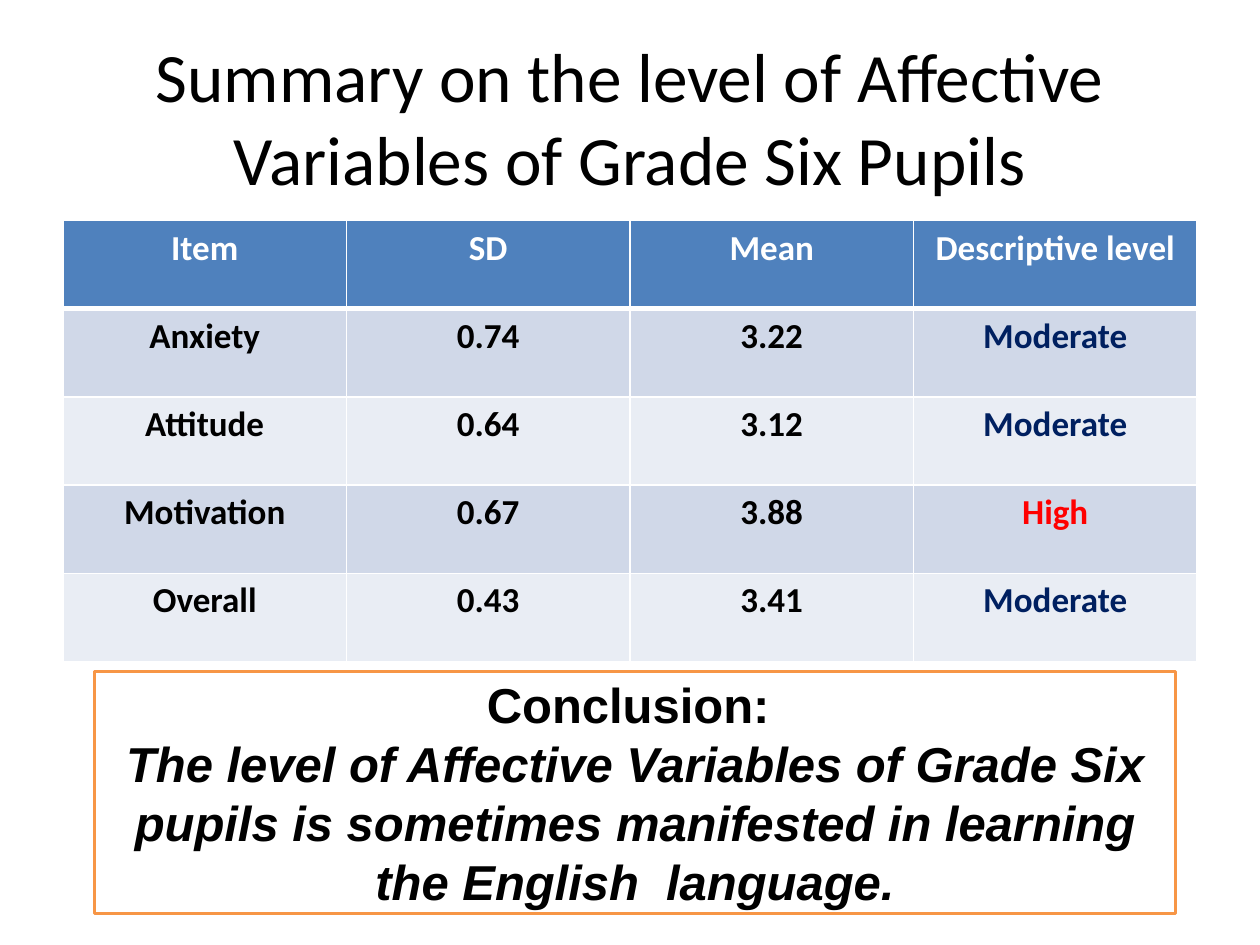
from dataclasses import dataclass

from lxml.etree import SubElement
from pptx import Presentation
from pptx.dml.color import RGBColor
from pptx.enum.shapes import MSO_SHAPE as Shape
from pptx.enum.text import MSO_ANCHOR as Anchor, PP_ALIGN as Align
from pptx.oxml.ns import qn
from pptx.util import Inches, Pt

COLORS = {
    "white": "FFFFFF", "black": "000000", "header": "4F81BD",
    "band_dark": "D0D8E8", "band_light": "E9EDF4",
    "navy": "002060", "red": "FF0000", "orange": "F79646",
}
LEVEL_COLORS = {"Moderate": "navy", "High": "red"}
HEADINGS = ("Item", "SD", "Mean", "Descriptive level")


@dataclass
class Result:
    item: str
    deviation: str
    mean: str
    level: str


RESULTS = [
    Result("Anxiety", "0.74", "3.22", "Moderate"),
    Result("Attitude", "0.64", "3.12", "Moderate"),
    Result("Motivation", "0.67", "3.88", "High"),
    Result("Overall", "0.43", "3.41", "Moderate"),
]


def color(name: str) -> RGBColor:
    return RGBColor.from_string(COLORS[name])


def write(paragraph, text: str, ink: str = "black", **font_format) -> None:
    """Put one centred run of text into a paragraph."""
    paragraph.alignment = Align.CENTER
    run = paragraph.add_run()
    run.text = text
    run.font.color.rgb = color(ink)
    for name, value in font_format.items():
        setattr(run.font, name, value)


def add_border(cell, side: str, width: float) -> None:
    line = SubElement(cell._tc.get_or_add_tcPr(), qn(f"a:{side}"), w=str(Pt(width)))
    fill = SubElement(line, qn("a:solidFill"))
    SubElement(fill, qn("a:srgbClr"), val=COLORS["white"])


def style_cell(cell, text: str, ink: str, fill: str, top: float, bottom: float) -> None:
    # Borders must precede the fill in the cell properties
    for side, width in {"lnL": 1, "lnR": 1, "lnT": top, "lnB": bottom}.items():
        add_border(cell, side, width)
    cell.fill.solid()
    cell.fill.fore_color.rgb = color(fill)
    write(cell.text_frame.paragraphs[0], text, ink,
          name="Calibri", size=Pt(20), bold=True)


def add_title(slide) -> None:
    box = slide.shapes.add_textbox(Inches(0.5), Inches(0.3), Inches(9), Inches(1.25))
    frame = box.text_frame
    frame.word_wrap = True
    frame.vertical_anchor = Anchor.MIDDLE
    write(frame.paragraphs[0],
          "Summary on the level of Affective Variables of Grade Six Pupils",
          name="Calibri", size=Pt(39.6))


def add_results(slide) -> None:
    table = slide.shapes.add_table(
        len(RESULTS) + 1, len(HEADINGS),
        Inches(0.5), Inches(1.75), Inches(9), Inches(3.5)).table
    for column, heading in enumerate(HEADINGS):
        style_cell(table.cell(0, column), heading, "white", "header", 1, 3)
    for row, result in enumerate(RESULTS, start=1):
        band = "band_dark" if row % 2 else "band_light"
        values = (result.item, result.deviation, result.mean, result.level)
        for column, value in enumerate(values):
            style_cell(table.cell(row, column), value,
                       LEVEL_COLORS.get(value, "black"), band,
                       3 if row == 1 else 1, 1)


def add_conclusion(slide) -> None:
    box = slide.shapes.add_shape(
        Shape.RECTANGLE, Inches(0.75), Inches(5.33), Inches(8.58), Inches(1.92))
    box.shadow.inherit = False
    box.fill.solid()
    box.fill.fore_color.rgb = color("white")
    box.line.color.rgb = color("orange")
    box.line.width = Pt(2)
    frame = box.text_frame
    frame.word_wrap = True
    frame.vertical_anchor = Anchor.MIDDLE
    text_format = {"name": "Arial", "size": Pt(28), "bold": True}
    write(frame.paragraphs[0], "Conclusion: ", **text_format)
    write(frame.add_paragraph(),
          "The level of Affective Variables of Grade Six pupils is sometimes "
          "manifested in learning the English  language.",
          italic=True, **text_format)


def main() -> None:
    presentation = Presentation()
    presentation.slide_width = Inches(10)
    presentation.slide_height = Inches(7.5)
    slide = presentation.slides.add_slide(presentation.slide_layouts[6])
    add_title(slide)
    add_results(slide)
    add_conclusion(slide)
    presentation.save("out.pptx")


if __name__ == "__main__":
    main()
